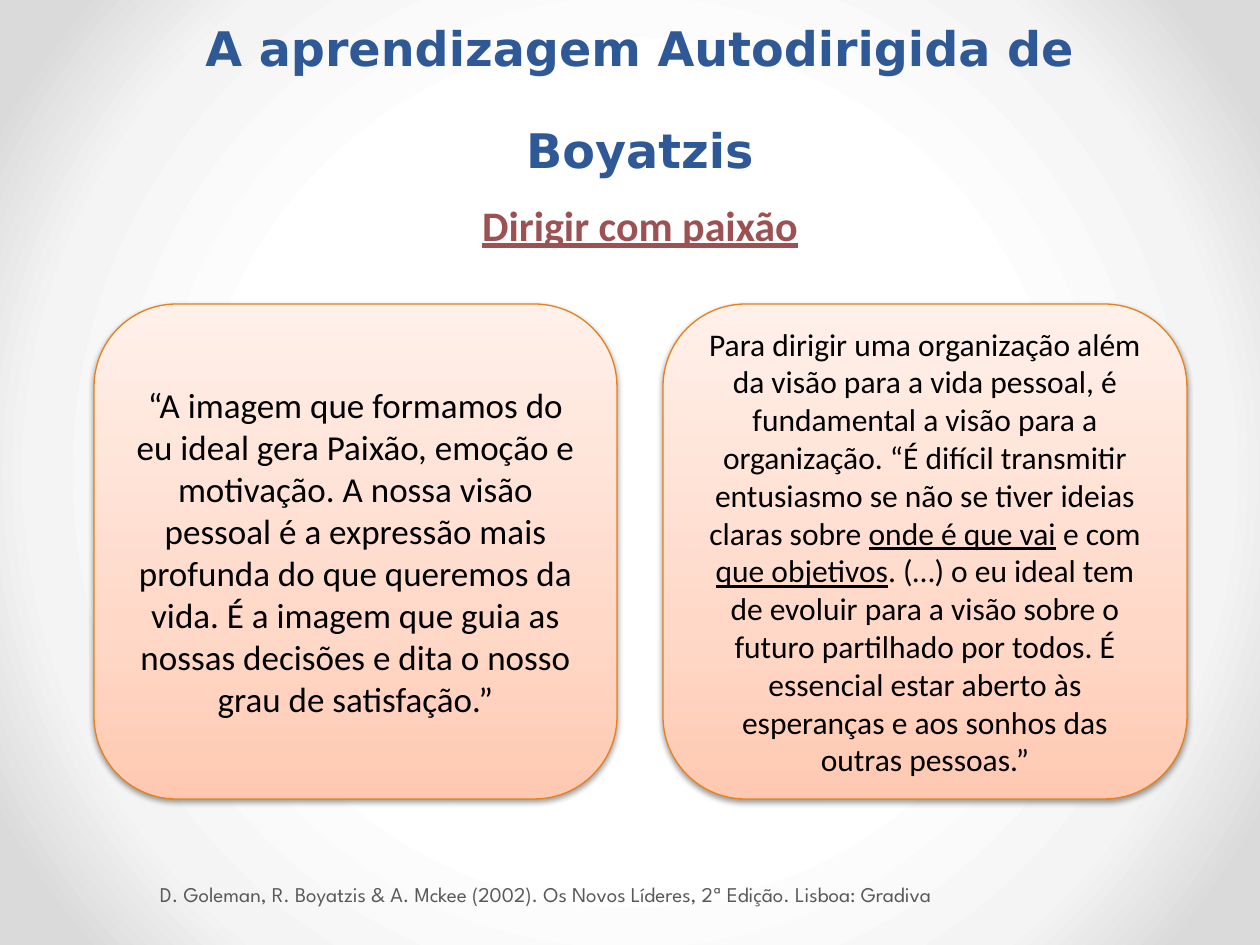
from pptx import Presentation
from pptx.dml.color import RGBColor
from pptx.enum.shapes import MSO_SHAPE
from pptx.enum.text import MSO_ANCHOR, MSO_AUTO_SIZE, PP_ALIGN
from pptx.oxml import parse_xml
from pptx.oxml.ns import nsdecls, qn
from pptx.util import Pt

PX = 914400 / 126
NS = nsdecls("a")

HEADING = "A aprendizagem Autodirigida de Boyatzis"
SUBTITLE = "Dirigir com paixão"
SOURCE = ("D. Goleman, R. Boyatzis & A. Mckee (2002). Os Novos Líderes, "
          "2ª Edição. Lisboa: Gradiva")
# Each card: left, width, text size, runs of (text, underlined)
CARD_TOP, CARD_HEIGHT = 304, 495
CARDS = [
    (94, 523, 20, [
        ("“A imagem que formamos do eu ideal gera Paixão, emoção e motivação. "
         "A nossa visão pessoal é a expressão mais profunda do que queremos da vida. "
         "É a imagem que guia as nossas decisões e dita o nosso grau de satisfação.”", False),
    ]),
    (663, 524, 18, [
        ("Para dirigir uma organização além da visão para a vida pessoal, é fundamental "
         "a visão para a organização. “É difícil transmitir entusiasmo se não se tiver "
         "ideias claras sobre ", False),
        ("onde é que vai", True),
        (" e com ", False),
        ("que objetivos", True),
        (". (…) o eu ideal tem de evoluir para a visão sobre o futuro partilhado por "
         "todos. É essencial estar aberto às esperanças e aos sonhos das outras pessoas.”", False),
    ]),
]
BACKGROUND_STOPS = [(50, "FFFFFF"), (76, "F4F4F4"), (92, "DADADA")]
CARD_STOPS = [(0, "FFC9B1"), (35, "FFD8C8"), (100, "FFF0EA")]
RADIAL = '<a:path path="circle"><a:fillToRect l="50000" t="50000" r="50000" b="50000"/></a:path>'
UPWARD = '<a:lin ang="16200000" scaled="0"/>'


def px(*lengths):
    return [round(n * PX) for n in lengths]


def rgb(color):
    return RGBColor.from_string(color)


def set_gradient(fill, element, stops, direction):
    """Give fill the stops and direction; element is the XML that holds it."""
    fill.gradient()
    old = element.find(".//" + qn("a:gradFill"))
    gs = "".join(f'<a:gs pos="{pos * 1000}"><a:srgbClr val="{color}"/></a:gs>'
                 for pos, color in stops)
    new = parse_xml(f'<a:gradFill {NS} rotWithShape="1"><a:gsLst>{gs}</a:gsLst>'
                    f'{direction}</a:gradFill>')
    old.getparent().replace(old, new)


def style_run(r, size, name, color, bold=False, underline=False):
    r.font.size, r.font.name, r.font.color.rgb = Pt(size), name, rgb(color)
    r.font.bold, r.font.underline = bold, underline


def set_line(sp, text, anchor, align, spacing=None, **style):
    """Fill a box with one styled paragraph."""
    tf = sp.text_frame
    tf.text = text
    tf.word_wrap, tf.auto_size = True, MSO_AUTO_SIZE.NONE
    tf.vertical_anchor = anchor
    p = tf.paragraphs[0]
    p.alignment, p.line_spacing = align, spacing
    style_run(p.runs[0], **style)


def add_card(s, left, width, size, runs):
    sp = s.shapes.add_shape(MSO_SHAPE.ROUNDED_RECTANGLE,
                            *px(left, CARD_TOP, width, CARD_HEIGHT))
    set_gradient(sp.fill, sp._element.spPr, CARD_STOPS, UPWARD)
    sp.line.color.rgb, sp.line.width = rgb("E6811C"), Pt(0.75)
    sp.shadow.inherit = False
    sp._element.spPr.find(qn("a:effectLst")).append(parse_xml(
        f'<a:outerShdw {NS} blurRad="40000" dist="20000" dir="5400000" rotWithShape="0">'
        '<a:srgbClr val="000000"><a:alpha val="38000"/></a:srgbClr></a:outerShdw>'))
    tf = sp.text_frame
    tf.word_wrap, tf.vertical_anchor = True, MSO_ANCHOR.MIDDLE
    p = tf.paragraphs[0]
    p.alignment = PP_ALIGN.CENTER
    for text, underline in runs:
        r = p.add_run()
        r.text = text
        style_run(r, size, "Calibri", "000000", underline=underline)


def main():
    prs = Presentation()
    prs.slide_width, prs.slide_height = px(1260, 945)
    s = prs.slides.add_slide(prs.slide_layouts[5])
    set_gradient(s.background.fill, s._element, BACKGROUND_STOPS, RADIAL)

    for card in CARDS:
        add_card(s, *card)

    source = s.shapes.add_textbox(*px(154, 869, 1026, 50))
    source.text_frame.margin_left = px(6)[0]
    set_line(source, SOURCE, MSO_ANCHOR.MIDDLE, PP_ALIGN.LEFT,
             size=12, name="League Spartan", color="595959")

    title = s.shapes.title
    title.left, title.top, title.width, title.height = px(73, 169, 1134, 87)
    set_line(title, SUBTITLE, MSO_ANCHOR.BOTTOM, PP_ALIGN.CENTER, Pt(58),
             size=24, name="Calibri", color="9C5252", bold=True, underline=True)

    heading = s.shapes.add_textbox(*px(73, 26, 1134, 158))
    set_line(heading, HEADING, MSO_ANCHOR.BOTTOM, PP_ALIGN.CENTER, Pt(58),
             size=27.2, name="DejaVu Sans", color="2F5897", bold=True)

    prs.save("out.pptx")


if __name__ == "__main__":
    main()
